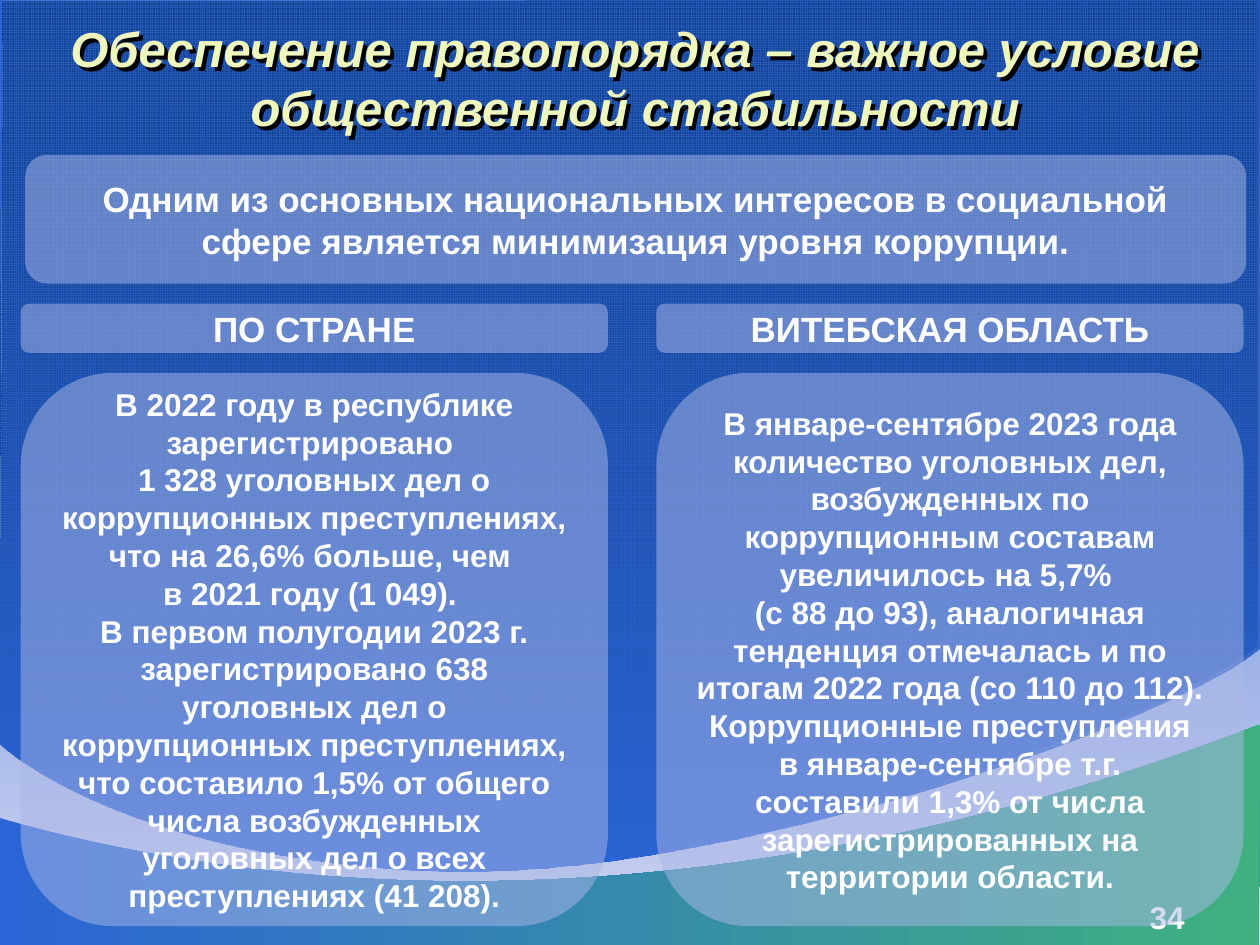
"""Build a slide on public order with two columns of figures over curved waves."""
from lxml import etree
from pptx import Presentation
from pptx.dml.color import RGBColor
from pptx.enum.dml import MSO_PATTERN
from pptx.enum.shapes import MSO_SHAPE
from pptx.enum.text import MSO_ANCHOR, PP_ALIGN
from pptx.oxml.ns import qn
from pptx.util import Inches, Pt

ROUNDED = MSO_SHAPE.ROUNDED_RECTANGLE
SMALL_GRID = MSO_PATTERN.SMALL_GRID
MIDDLE, TOP = MSO_ANCHOR.MIDDLE, MSO_ANCHOR.TOP
CENTER, RIGHT = PP_ALIGN.CENTER, PP_ALIGN.RIGHT
BLUE, WHITE = "2B64D5", "FFFFFF"
hex_color = RGBColor.from_string

deck = Presentation()
deck.slide_width, deck.slide_height = Inches(10), Inches(7.5)
page = deck.slides.add_slide(deck.slide_layouts[6])
unit = deck.slide_width / 100


def add_wave(start, curves, corners):
    """Draw an outline of Bezier curves closed by straight corners."""
    knots = [knot for curve in curves for knot in curve]
    points = [(round(x * 10), round(y * 10)) for x, y in [start] + knots + corners]
    builder = page.shapes.build_freeform(*points[0], scale=unit / 10)
    builder.add_line_segments(points[1:], close=True)
    wave = builder.convert_to_shape()
    lines = list(wave.element.iter(qn("a:lnTo")))
    for first in range(0, len(knots), 3):
        bezier = etree.Element(qn("a:cubicBezTo"))
        lines[first].addprevious(bezier)
        for line in lines[first:first + 3]:
            bezier.append(line[0])
            line.getparent().remove(line)
    wave.shadow.inherit = False
    wave.line.fill.background()
    return wave


def write_text(box, text, size, color=WHITE, align=CENTER, anchor=MIDDLE):
    """Fill a box with bold Arial text."""
    frame = box.text_frame
    frame.word_wrap = True
    frame.vertical_anchor = anchor
    frame.text = text
    for para in frame.paragraphs:
        para.alignment = align
        for span in para.runs:
            span.font.name, span.font.size, span.font.bold = "Arial", Pt(size), True
            span.font.color.rgb = hex_color(color)


mesh = add_wave((-0.1, 58.9), [[(1.1, 60.1), (11, 67.9), (34.2, 69)],
                               [(57.3, 69.9), (93.4, 56.8), (99.9, 51.2)]],
                [(99.9, -0.2), (0, -0.1), (0.1, 0.1)])
mesh.fill.patterned()
mesh.fill.pattern = SMALL_GRID
mesh.fill.fore_color.rgb = hex_color(BLUE)
mesh.fill.back_color.rgb = hex_color("003D7B")

veil = add_wave((0, 59), [[(1.2, 60.2), (11.2, 68.1), (34.3, 69.1)],
                          [(57.5, 70.1), (93.6, 57), (100, 51.4)]],
                [(100, -0.1), (0.2, 0.1), (0.3, 0.2)])
shore = add_wave((-0.1, 64.9), [[(1.1, 65.2), (12.9, 69), (30.5, 69.8)],
                                [(48.1, 70.6), (72.2, 68.3), (100, 57.5)]],
                 [(99.9, 75), (-0.3, 75)])

for fill, colors, angle in ((page.background.fill, (BLUE, "CED4F0"), 270),
                            (veil.fill, ("1F4898", BLUE), 270),
                            (shore.fill, (BLUE, "3FB180"), 0)):
    fill.gradient()
    fill.gradient_angle = angle
    for position, (stop, color) in enumerate(zip(fill.gradient_stops, colors)):
        stop.position = position
        stop.color.rgb = hex_color(color)

veil_start = next(veil.element.iter(qn("a:srgbClr")))
etree.SubElement(veil_start, qn("a:alpha"), val="46000")

number = page.shapes.add_textbox(*(int(n * unit) for n in (71.7, 70.8, 23.3, 2.7)))
write_text(number, "34", 18, align=RIGHT, anchor=TOP)

title = page.shapes.add_textbox(*(int(n * unit) for n in (0.4, 0, 100, 12.3)))
write_text(title, "Обеспечение правопорядка – важное условие общественной стабильности",
           28, "F0F7BD")
title.text_frame.paragraphs[0].runs[0].font.italic = True
effects = etree.SubElement(title.element.spPr, qn("a:effectLst"))
shadow = etree.SubElement(effects, qn("a:outerShdw"), dist="38100", dir="2700000")
etree.SubElement(shadow, qn("a:srgbClr"), val="000000")

country = (
    "В 2022 году в республике зарегистрировано \v1 328 уголовных дел о коррупционных "
    "преступлениях, что на 26,6% больше, чем \vв 2021 году (1 049). \vВ первом полугодии "
    "2023 г. зарегистрировано 638 уголовных дел о коррупционных преступлениях, что "
    "составило 1,5% от общего числа возбужденных уголовных дел о всех преступлениях (41 208).")
region = (
    "В январе-сентябре 2023 года количество уголовных дел, возбужденных по коррупционным "
    "составам увеличилось на 5,7% \v(с 88 до 93), аналогичная тенденция отмечалась и по "
    "итогам 2022 года (со 110 до 112).\nКоррупционные преступления в январе-сентябре т.г. "
    "составили 1,3% от числа зарегистрированных на территории области.")
summary = ("Одним из основных национальных интересов в социальной сфере "
           "является минимизация уровня коррупции.")

panels = [((2, 12.3, 96.9, 10.2), summary, 20)]
for left, heading, details in ((1.65, "ПО СТРАНЕ", country),
                               (52.1, "ВИТЕБСКАЯ ОБЛАСТЬ", region)):
    panels += [((left, 24.1, 46.6, 3.9), heading, 20),
               ((left, 29.6, 46.6, 43.9), details, 18)]

for place, text, size in panels:
    panel = page.shapes.add_shape(ROUNDED, *(int(n * unit) for n in place))
    panel.shadow.inherit = False
    panel.line.fill.background()
    panel.fill.solid()
    panel.fill.fore_color.rgb = hex_color("ACB8E7")
    tint = next(panel.element.iter(qn("a:srgbClr")))
    etree.SubElement(tint, qn("a:alpha"), val="50000")
    write_text(panel, text, size)

deck.save("out.pptx")
